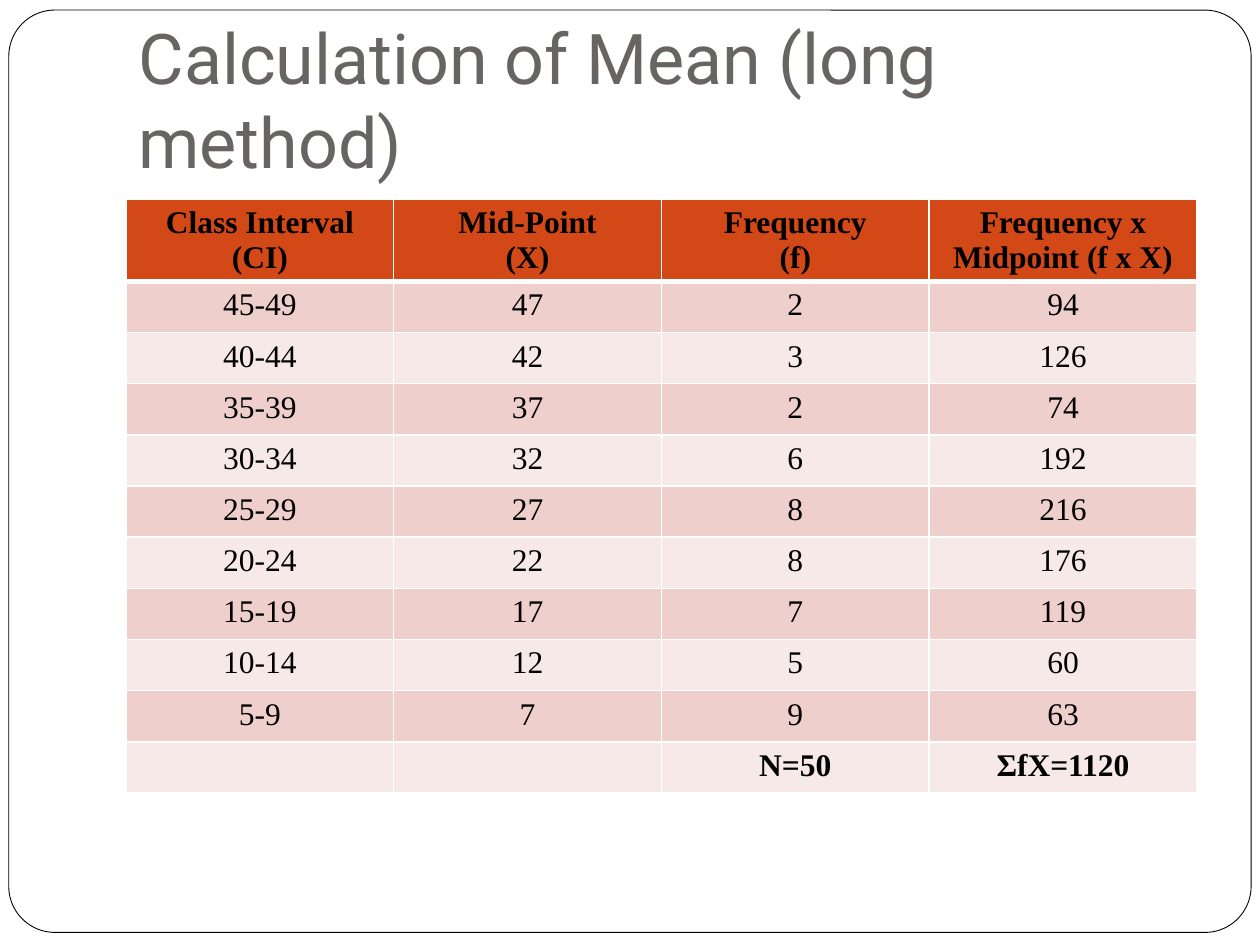
from lxml.etree import SubElement
from pptx import Presentation
from pptx.dml.color import RGBColor
from pptx.enum.shapes import MSO_SHAPE
from pptx.enum.text import MSO_ANCHOR, MSO_AUTO_SIZE, PP_ALIGN
from pptx.oxml.ns import qn
from pptx.util import Inches, Pt


def paint(fmt, color):
    fmt.solid()
    fmt.fore_color.rgb = RGBColor.from_string(color)


def set_borders(cell, bottom):
    tcPr = cell._tc.get_or_add_tcPr()
    for i, (side, width) in enumerate(
            [("lnL", 1), ("lnR", 1), ("lnT", 1), ("lnB", bottom)]):
        ln = SubElement(tcPr, qn("a:" + side), w=str(Pt(width)))
        fill = SubElement(ln, qn("a:solidFill"))
        SubElement(fill, qn("a:srgbClr"), val="FFFFFF")
        tcPr.insert(i, ln)  # borders come before the cell fill


prs = Presentation()
prs.slide_width, prs.slide_height = Inches(10), Inches(7.5)
s = prs.slides.add_slide(prs.slide_layouts[5])

# Rounded frame, behind everything
frame = s.shapes.add_shape(MSO_SHAPE.ROUNDED_RECTANGLE, Inches(0.07),
                           Inches(0.08), Inches(9.86), Inches(7.32))
frame.adjustments[0] = 0.05
frame.shadow.inherit = False
paint(frame.fill, "FFFFFF")
paint(frame.line.fill, "000000")
frame.line.width = Pt(0.5)
s.shapes._spTree.insert(2, frame._element)

# Title
title = s.shapes.title
title.left, title.top = Inches(1), Inches(0.3)
title.width, title.height = Inches(8.5), Inches(1.25)
tf = title.text_frame
tf.text = "Calculation of Mean (long method)"
tf.word_wrap = True
tf.auto_size = MSO_AUTO_SIZE.NONE
tf.vertical_anchor = MSO_ANCHOR.BOTTOM
tf.margin_bottom = Inches(0.1)
p = tf.paragraphs[0]
p.alignment = PP_ALIGN.LEFT
p.font.name, p.font.size = "Roboto", Pt(40)
paint(p.font.fill, "696464")

# Frequency table
rows = [
    ("Class Interval (CI)", "Mid-Point\n(X)", "Frequency\n(f)",
     "Frequency x Midpoint (f x X)"),
    ("45-49", "47", "2", "94"),
    ("40-44", "42", "3", "126"),
    ("35-39", "37", "2", "74"),
    ("30-34", "32", "6", "192"),
    ("25-29", "27", "8", "216"),
    ("20-24", "22", "8", "176"),
    ("15-19", "17", "7", "119"),
    ("10-14", "12", "5", "60"),
    ("5-9", "7", "9", "63"),
    ("", "", "N=50", "ΣfX=1120"),
]
last = len(rows) - 1
header_height, table_height = 0.64, 4.7
table = s.shapes.add_table(len(rows), 4, Inches(1), Inches(1.58),
                           Inches(8.5), Inches(table_height)).table
for i, values in enumerate(rows):
    is_header = i == 0
    table.rows[i].height = Inches(
        header_height if is_header else (table_height - header_height) / last)
    color = "D34817" if is_header else ("F7E9E8", "EFCFCC")[i % 2]
    for j, value in enumerate(values):
        cell = table.cell(i, j)
        cell.text = value
        cell.margin_left = cell.margin_right = Inches(0.09)
        paint(cell.fill, color)
        set_borders(cell, 3 if is_header else 1)
        for p in cell.text_frame.paragraphs:
            p.alignment = PP_ALIGN.CENTER
            p.font.name, p.font.size = "Times New Roman", Pt(18)
            p.font.bold = i in (0, last)
            paint(p.font.fill, "000000")

prs.save("out.pptx")
